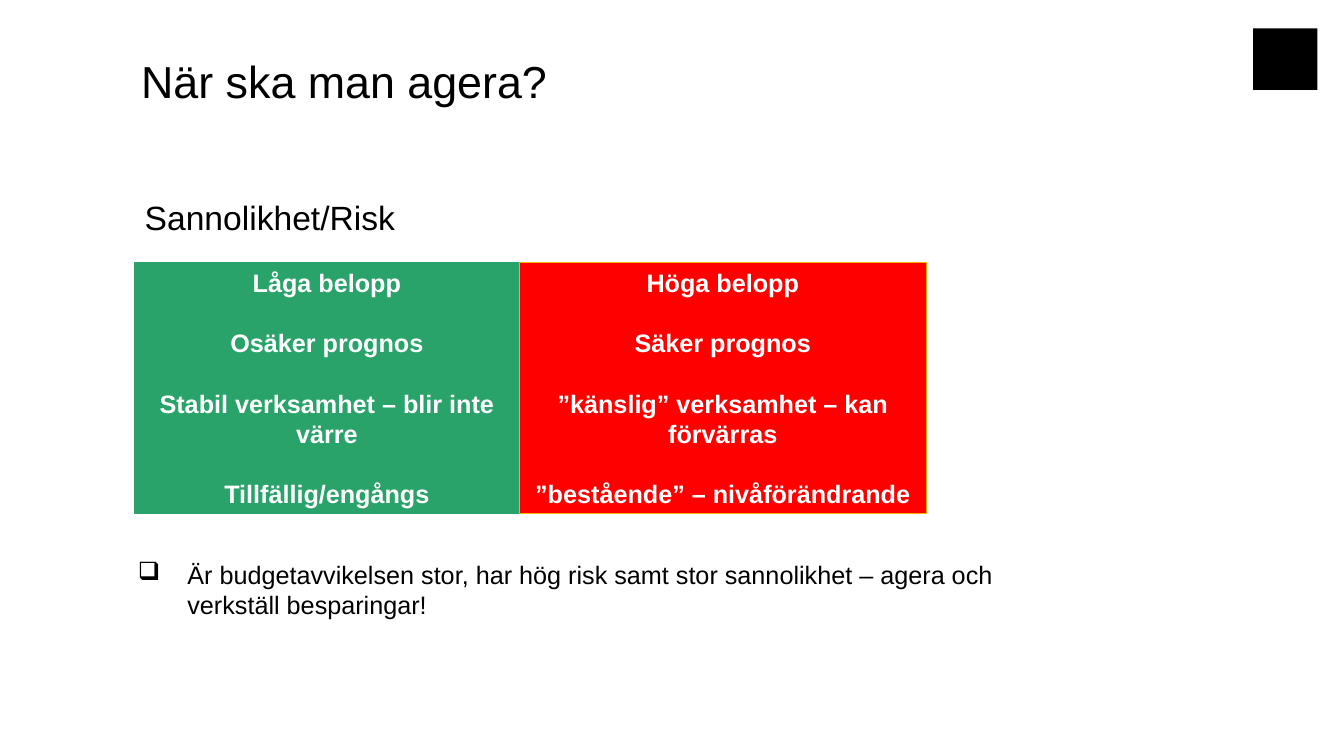
from dataclasses import dataclass

from lxml import etree
from pptx import Presentation
from pptx.dml.color import RGBColor
from pptx.enum.shapes import MSO_SHAPE
from pptx.enum.text import MSO_ANCHOR, MSO_AUTO_SIZE, PP_ALIGN
from pptx.oxml.ns import qn
from pptx.util import Pt

RECTANGLE = MSO_SHAPE.RECTANGLE
TOP, MIDDLE, BOTTOM = MSO_ANCHOR.TOP, MSO_ANCHOR.MIDDLE, MSO_ANCHOR.BOTTOM
NO_AUTOFIT = MSO_AUTO_SIZE.NONE
LEFT, CENTER = PP_ALIGN.LEFT, PP_ALIGN.CENTER
TITLE_ONLY = 5


@dataclass(frozen=True)
class Theme:
    font: str = "Arial"
    black: RGBColor = RGBColor(0x00, 0x00, 0x00)
    white: RGBColor = RGBColor(0xFF, 0xFF, 0xFF)
    green: RGBColor = RGBColor(0x29, 0xA3, 0x69)
    red: RGBColor = RGBColor(0xFF, 0x00, 0x00)
    amber: RGBColor = RGBColor(0xF9, 0xB2, 0x00)
    title_size: float = 32
    heading_size: float = 24
    body_size: float = 18


THEME = Theme()

WAIT_REASONS = [
    "Låga belopp",
    "Osäker prognos",
    "Stabil verksamhet – blir inte värre",
    "Tillfällig/engångs",
]
ACT_REASONS = [
    "Höga belopp",
    "Säker prognos",
    "”känslig” verksamhet – kan förvärras",
    "”bestående” – nivåförändrande",
]


def points(box):
    return [Pt(value) for value in box]


def add_run(paragraph, text, size, color, bold=False):
    run = paragraph.add_run()
    run.text = text
    run.font.name = THEME.font
    run.font.size = Pt(size)
    run.font.color.rgb = color
    run.font.bold = bold


def add_plain_shape(slide, box, fill, line=None):
    shape = slide.shapes.add_shape(RECTANGLE, *points(box))
    shape.shadow.inherit = False
    shape.fill.solid()
    shape.fill.fore_color.rgb = fill
    if line is None:
        shape.line.fill.background()
    else:
        shape.line.color.rgb = line
        shape.line.width = Pt(0.5)
    return shape


def add_text_box(slide, box):
    frame = slide.shapes.add_textbox(*points(box)).text_frame
    frame.word_wrap = True
    frame.vertical_anchor = TOP
    return frame.paragraphs[0]


def add_title(slide, box, text):
    title = slide.shapes.title
    title.left, title.top, title.width, title.height = points(box)
    frame = title.text_frame
    frame.auto_size = NO_AUTOFIT
    frame.vertical_anchor = BOTTOM
    frame.margin_left = frame.margin_right = 0
    frame.margin_top = frame.margin_bottom = 0
    heading = frame.paragraphs[0]
    heading.alignment = LEFT
    heading.line_spacing = 0.9
    add_run(heading, text, THEME.title_size, THEME.black)


def add_heading(slide, box, text):
    add_run(add_text_box(slide, box), text, THEME.heading_size, THEME.black)


def add_reasons(slide, box, reasons, fill, line):
    frame = add_plain_shape(slide, box, fill, line).text_frame
    frame.word_wrap = True
    frame.vertical_anchor = MIDDLE
    for index, reason in enumerate(reasons):
        paragraph = frame.add_paragraph() if index else frame.paragraphs[0]
        paragraph.alignment = CENTER
        if index:
            paragraph.space_before = Pt(21.5)
        add_run(paragraph, reason, THEME.body_size, THEME.white, bold=True)


def add_conclusion(slide, box, text):
    conclusion = add_text_box(slide, box)
    properties = conclusion._p.get_or_add_pPr()
    indent = Pt(35.4)
    properties.set("marL", str(indent))
    properties.set("indent", str(-indent))
    etree.SubElement(properties, qn("a:buChar")).set("char", "❑")
    add_run(conclusion, text, THEME.body_size, THEME.black)


def build_slide(presentation):
    slide = presentation.slides.add_slide(presentation.slide_layouts[TITLE_ONLY])
    add_plain_shape(slide, (895, 20.2, 46, 44), THEME.black)
    add_title(slide, (100.8, 23.8, 648, 53.3), "När ska man agera?")

    left, top, wait_width, act_width, height = 96.3, 187.5, 274.5, 291, 179.3
    add_heading(slide, (left, 136.8, 328, 36), "Sannolikhet/Risk")
    add_reasons(slide, (left, top, wait_width, height),
                WAIT_REASONS, THEME.green, THEME.green)
    add_reasons(slide, (left + wait_width, top, act_width, height),
                ACT_REASONS, THEME.red, THEME.amber)
    add_conclusion(slide, (91.4, 396, 695.5, 75.6),
                   "Är budgetavvikelsen stor, har hög risk samt stor "
                   "sannolikhet – agera och verkställ besparingar!")


def main():
    presentation = Presentation()
    presentation.slide_width, presentation.slide_height = Pt(960), Pt(540)
    build_slide(presentation)
    presentation.save("out.pptx")


if __name__ == "__main__":
    main()
